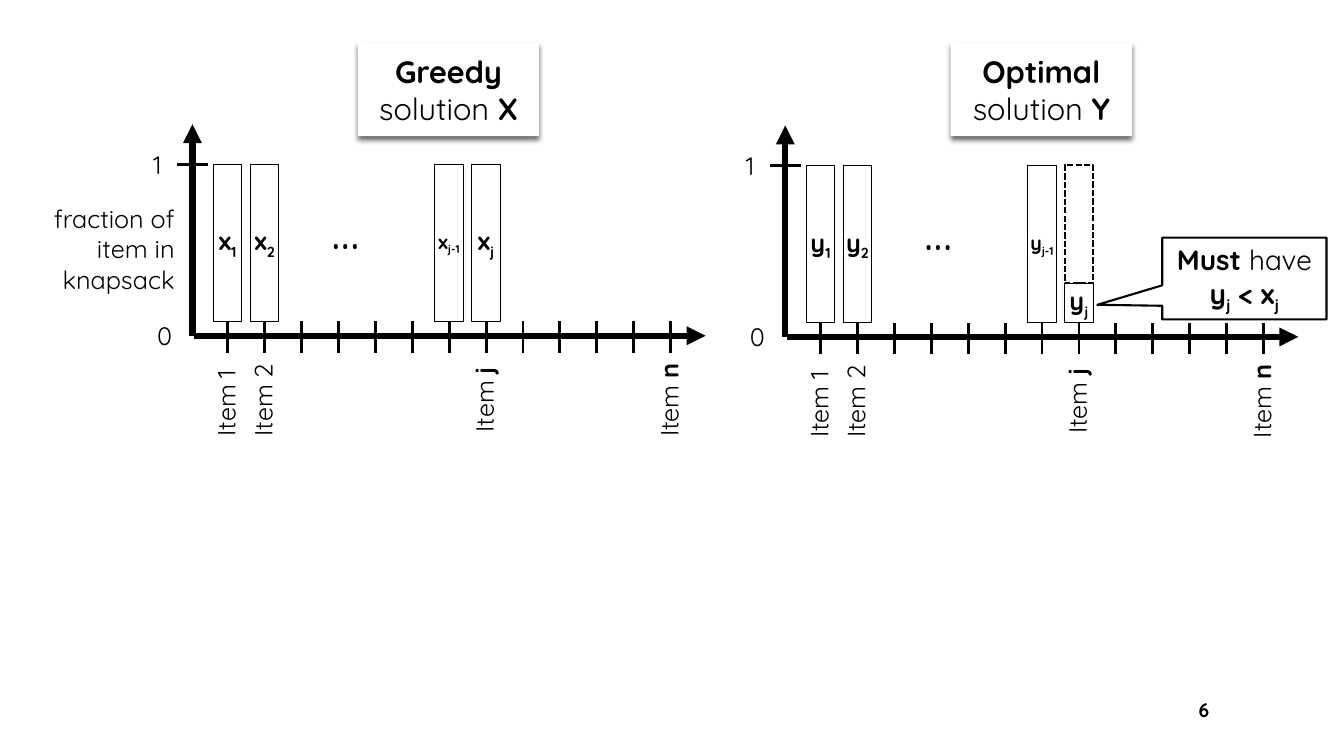
"""Build a slide comparing the greedy and optimal fractional knapsack solutions."""
from dataclasses import dataclass
from typing import NamedTuple, Optional

from lxml.etree import SubElement
from pptx import Presentation
from pptx.dml.color import RGBColor
from pptx.enum.dml import MSO_LINE
from pptx.enum.shapes import MSO_CONNECTOR, MSO_SHAPE
from pptx.enum.text import MSO_ANCHOR, PP_ALIGN
from pptx.oxml.ns import qn
from pptx.util import Cm, Pt


@dataclass(frozen=True)
class Theme:
    """Colours, font, type sizes and line widths."""
    ink: RGBColor = RGBColor(0, 0, 0)
    paper: RGBColor = RGBColor(255, 255, 255)
    font: str = "Quicksand"
    heading: int = 22
    callout: int = 20
    body: int = 18
    small: int = 14
    ellipsis: int = 36
    axis: float = 4.5
    tick: float = 2
    outline: float = 1.5
    hairline: float = 0.75


class Span(NamedTuple):
    """A piece of text with its emphasis."""
    text: str
    bold: bool = False
    subscript: bool = False


class Box(NamedTuple):
    """A rectangle in centimetres."""
    left: float
    top: float
    width: float
    height: float


class Bar(NamedTuple):
    """A bar standing on a tick."""
    tick: int
    index: str
    size: int
    height: float


class ItemLabel(NamedTuple):
    """A rotated label under a tick."""
    tick: int
    name: str
    bold: bool
    width: float


@dataclass(frozen=True)
class Chart:
    """One solution, placed by the origin of its axes."""
    left: float
    base: float
    heading: str
    letter: str
    variable: str
    bars: tuple[Bar, ...]

    def tick_x(self, tick: int) -> float:
        """Return the horizontal position of a tick."""
        return self.left + FIRST_TICK + tick * TICK_STEP


THEME = Theme()
FIRST_TICK, TICK_STEP, TICK_COUNT = 0.89, 0.93, 13
TICK_ABOVE, TICK_BELOW = 0.36, 0.43
BAR_WIDTH, FULL_HEIGHT, PART_HEIGHT = 0.72, 3.96, 0.99
ONE_LEVEL = TICK_ABOVE + FULL_HEIGHT
J_TICK = 7
LABEL_HEIGHT, LABEL_DROP = 1.02, 1.57

FULL_BARS = (
    Bar(0, "1", THEME.body, FULL_HEIGHT),
    Bar(1, "2", THEME.body, FULL_HEIGHT),
    Bar(J_TICK - 1, "j-1", THEME.small, FULL_HEIGHT),
)
GREEDY = Chart(4.85, 8.46, "Greedy", "X", "x",
               FULL_BARS + (Bar(J_TICK, "j", THEME.body, FULL_HEIGHT),))
OPTIMAL = Chart(19.79, 8.49, "Optimal", "Y", "y",
                FULL_BARS + (Bar(J_TICK, "j", THEME.body, PART_HEIGHT),))
ITEM_LABELS = (
    ItemLabel(0, "1", False, 2.44),
    ItemLabel(1, "2", False, 2.44),
    ItemLabel(J_TICK, "j", True, 2.24),
    ItemLabel(TICK_COUNT - 1, "n", True, 2.46),
)


def write(shape, paragraphs: list[list[Span]], size: int, align=PP_ALIGN.LEFT, wrap: bool = True):
    """Fill a shape with formatted paragraphs."""
    frame = shape.text_frame
    frame.word_wrap = wrap
    for number, spans in enumerate(paragraphs):
        para = frame.add_paragraph() if number else frame.paragraphs[0]
        para.alignment = align
        para.font.name = THEME.font
        para.font.size = Pt(size)
        para.font.color.rgb = THEME.ink
        for span in spans:
            run = para.add_run()
            run.text = span.text
            run.font.bold = span.bold
            if span.subscript:
                run.font._element.set("baseline", "-25000")


def add_text(page, box: Box, spans: list[Span], size: int, align=PP_ALIGN.LEFT, wrap: bool = False):
    """Add a text box."""
    shape = page.shapes.add_textbox(*map(Cm, box))
    write(shape, [spans], size, align, wrap)
    return shape


def add_panel(page, kind, box: Box, line: Optional[float], filled: bool = True):
    """Add a flat preset shape with an optional outline."""
    shape = page.shapes.add_shape(kind, *map(Cm, box))
    shape.shadow.inherit = False
    shape.text_frame.vertical_anchor = MSO_ANCHOR.MIDDLE
    if filled:
        shape.fill.solid()
        shape.fill.fore_color.rgb = THEME.paper
    else:
        shape.fill.background()
    if line is None:
        shape.line.fill.background()
    else:
        shape.line.width = Pt(line)
        shape.line.color.rgb = THEME.ink
    return shape


def add_line(page, start: tuple[float, float], end: tuple[float, float], width: float, arrow: bool = False):
    """Add a straight line, with an arrowhead at its end if asked."""
    line = page.shapes.add_connector(MSO_CONNECTOR.STRAIGHT, *map(Cm, start + end))
    line.line.width = Pt(width)
    line.line.color.rgb = THEME.ink
    if arrow:
        SubElement(line.line._get_or_add_ln(), qn("a:tailEnd"), type="triangle")
    SubElement(line._element.spPr, qn("a:effectLst"))
    return line


def add_heading(page, chart: Chart) -> None:
    """Add the shadowed heading card above a chart."""
    card = add_panel(page, MSO_SHAPE.RECTANGLE, Box(chart.left + 4.17, 1.07, 4.57, 2.36), None)
    shadow = SubElement(card._element.spPr.find(qn("a:effectLst")), qn("a:outerShdw"),
                        blurRad="50800", dist="38100", dir="5400000", algn="t", rotWithShape="0")
    colour = SubElement(shadow, qn("a:srgbClr"), val=str(THEME.ink))
    SubElement(colour, qn("a:alpha"), val="60000")
    spans = [Span(f"{chart.heading} ", True), Span("solution"), Span(f" {chart.letter}", True)]
    write(card, [spans], THEME.heading, PP_ALIGN.CENTER)


def add_chart_drawing(page, chart: Chart) -> None:
    """Draw the heading, bars, axes, ticks and labels of one solution."""
    left, base = chart.left, chart.base
    add_heading(page, chart)
    bars = {}
    for bar in chart.bars:
        box = Box(chart.tick_x(bar.tick) - BAR_WIDTH / 2, base - TICK_ABOVE - bar.height, BAR_WIDTH, bar.height)
        bars[bar.tick] = add_panel(page, MSO_SHAPE.RECTANGLE, box, THEME.hairline)
        spans = [Span(chart.variable, True), Span(bar.index, True, True)]
        write(bars[bar.tick], [spans], bar.size, PP_ALIGN.CENTER, False)
    add_line(page, (left + 0.05, base), (left + 12.93, base), THEME.axis, True)
    add_line(page, (left, base), (left, base - 5.33), THEME.axis, True)
    add_line(page, (left - 0.38, base - ONE_LEVEL), (left + 0.4, base - ONE_LEVEL), THEME.tick)
    for tick in range(TICK_COUNT):
        x = chart.tick_x(tick)
        mark = add_line(page, (x, base + TICK_BELOW), (x, base - TICK_ABOVE), THEME.tick)
        if tick in bars:
            mark.end_connect(bars[tick], 2)
    add_text(page, Box(left - 1.14, base - 0.51, 0.86, 1.02), [Span("0")], THEME.body)
    add_text(page, Box(left - 1.24, base - 4.83, 0.86, 1.02), [Span("1")], THEME.body)
    add_text(page, Box(left + 3.25, base - 3.56, 1.8, 1.8), [Span("…")], THEME.ellipsis)
    for label in ITEM_LABELS:
        box = Box(chart.tick_x(label.tick) - 0.05 - label.width / 2, base + LABEL_DROP - LABEL_HEIGHT / 2,
                  label.width, LABEL_HEIGHT)
        add_text(page, box, [Span("Item "), Span(label.name, label.bold)], THEME.body).rotation = 270


def main() -> None:
    """Build and save the slide."""
    deck = Presentation()
    deck.slide_width, deck.slide_height = Cm(33.87), Cm(19.05)
    page = deck.slides.add_slide(deck.slide_layouts[6])
    for chart in (GREEDY, OPTIMAL):
        add_chart_drawing(page, chart)
    add_text(page, Box(0.71, 5, 3.94, 2.57), [Span("fraction of item in knapsack")],
             THEME.body, PP_ALIGN.RIGHT, True)
    gap = Box(OPTIMAL.tick_x(J_TICK) - BAR_WIDTH / 2, OPTIMAL.base - ONE_LEVEL, BAR_WIDTH, FULL_HEIGHT - PART_HEIGHT)
    add_panel(page, MSO_SHAPE.RECTANGLE, gap, THEME.outline, False).line.dash_style = MSO_LINE.SQUARE_DOT
    callout = add_panel(page, MSO_SHAPE.RECTANGULAR_CALLOUT, Box(29.29, 5.99, 4.14, 2.06), THEME.outline)
    callout.adjustments[0], callout.adjustments[1] = -0.895, 0.321
    j_index = Span("j", True, True)
    write(callout, [[Span("Must ", True), Span("have")],
                    [Span("y", True), j_index, Span(" < x", True), j_index]], THEME.callout, PP_ALIGN.CENTER)
    number = add_text(page, Box(29.21, 17.37, 1.52, 1.02), [Span("6", True)], THEME.small, PP_ALIGN.RIGHT, True)
    number.text_frame.vertical_anchor = MSO_ANCHOR.MIDDLE
    deck.save("out.pptx")


if __name__ == "__main__":
    main()
